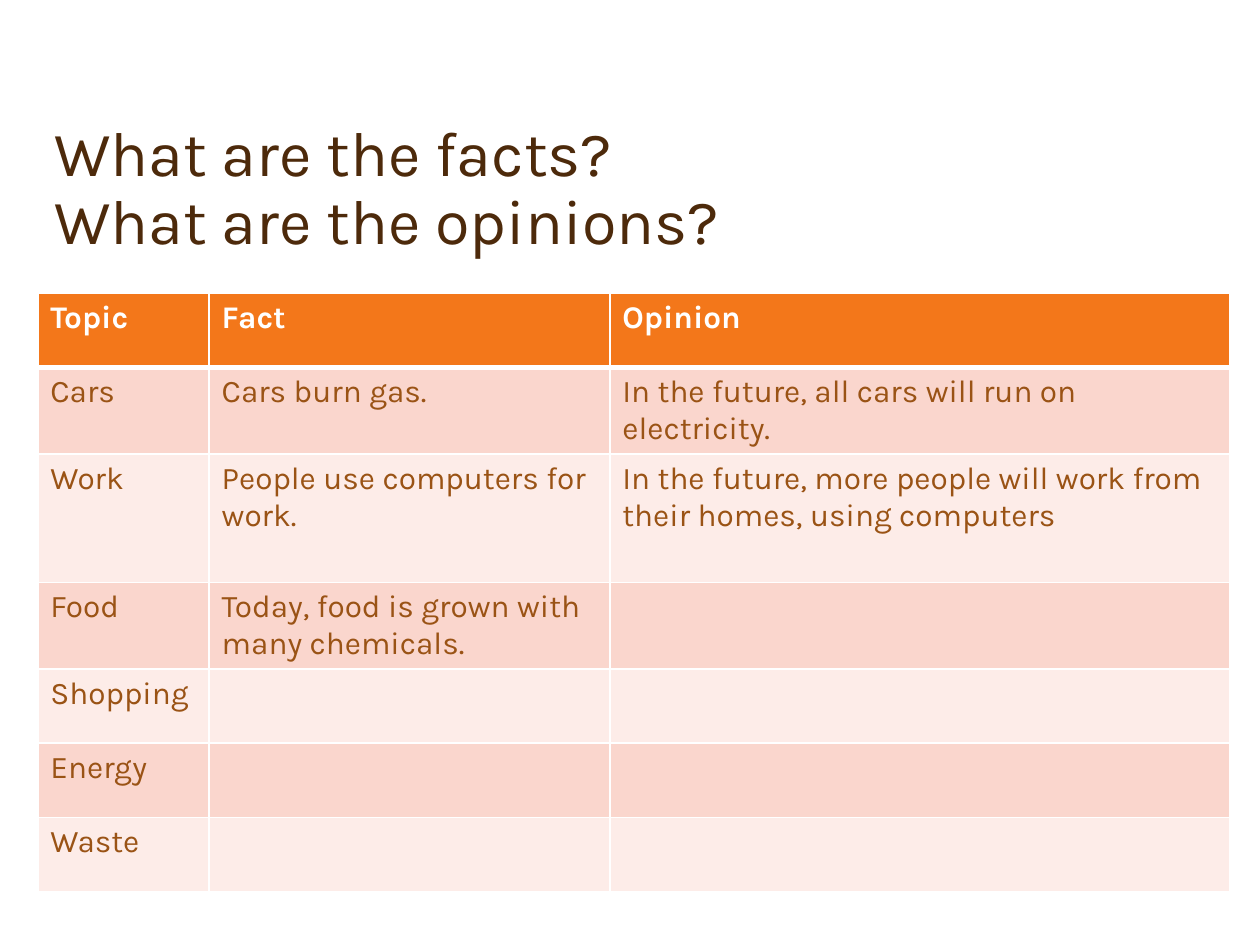
from lxml.etree import SubElement
from pptx import Presentation
from pptx.dml.color import RGBColor
from pptx.enum.text import MSO_ANCHOR, MSO_AUTO_SIZE, PP_ALIGN
from pptx.oxml.ns import qn
from pptx.util import Inches, Pt

WHITE = RGBColor(0xFF, 0xFF, 0xFF)
TITLE_BROWN = RGBColor(0x4D, 0x2A, 0x0B)
BODY_BROWN = RGBColor(0x9A, 0x53, 0x15)
ORANGE = RGBColor(0xF3, 0x77, 0x1A)
BANDS = (RGBColor(0xFD, 0xEC, 0xE8), RGBColor(0xFA, 0xD6, 0xCD))

TITLE = "What are the facts?\vWhat are the opinions?"
COLUMN_WIDTHS = (1.36, 3.18, 4.92)
ROW_HEIGHT = 0.59
TALL_ROWS = {"Work": 1.02}
ROWS = (
    ("Topic", "Fact", "Opinion"),
    ("Cars", "Cars burn gas.", "In the future, all cars will run on electricity."),
    ("Work", "People use computers for work.",
     "In the future, more people will work from their homes, using computers"),
    ("Food", "Today, food is grown with many chemicals.", ""),
    ("Shopping", "", ""),
    ("Energy", "", ""),
    ("Waste", "", ""),
)


class SlideBuilder:
    font_name = "Karla"

    def __init__(self, presentation):
        self.width = presentation.slide_width
        self.height = presentation.slide_height
        self.slide = presentation.slides.add_slide(presentation.slide_layouts[5])

    def box(self, left, top, width, height):
        """Turn shares of the slide's size into lengths."""
        return (int(left * self.width), int(top * self.height),
                int(width * self.width), int(height * self.height))

    def style(self, paragraph, size, color, bold=False):
        for font in [run.font for run in paragraph.runs] or [paragraph.font]:
            font.name = self.font_name
            font.size = Pt(size)
            font.bold = bold
            font.color.rgb = color

    def title(self, text, *shares):
        shape = self.slide.shapes.title
        shape.left, shape.top, shape.width, shape.height = self.box(*shares)
        text_frame = shape.text_frame
        text_frame.text = text
        text_frame.word_wrap = True
        text_frame.auto_size = MSO_AUTO_SIZE.NONE
        text_frame.vertical_anchor = MSO_ANCHOR.BOTTOM
        paragraph = text_frame.paragraphs[0]
        paragraph.alignment = PP_ALIGN.LEFT
        paragraph.line_spacing = 0.9
        self.style(paragraph, 36, TITLE_BROWN)

    def borders(self, cell, bottom):
        properties = cell._tc.get_or_add_tcPr()
        widths = {"a:lnL": 1, "a:lnR": 1, "a:lnT": 1, "a:lnB": bottom}
        for index, (tag, points) in enumerate(widths.items()):
            line = SubElement(properties, qn(tag), w=str(Pt(points)))
            fill = SubElement(line, qn("a:solidFill"))
            SubElement(fill, qn("a:srgbClr"), val=str(WHITE))
            properties.insert(index, line)

    def table(self, rows, column_widths, *shares):
        frame = self.slide.shapes.add_table(
            len(rows), len(column_widths), *self.box(*shares))
        table = frame.table
        for column, width in zip(table.columns, column_widths):
            column.width = Inches(width)
        for row_index, texts in enumerate(rows):
            is_header = row_index == 0
            row = table.rows[row_index]
            row.height = Inches(TALL_ROWS.get(texts[0], ROW_HEIGHT))
            for cell, text in zip(row.cells, texts):
                cell.text_frame.text = text
                self.style(cell.text_frame.paragraphs[0], 18,
                           WHITE if is_header else BODY_BROWN, is_header)
                cell.fill.solid()
                cell.fill.fore_color.rgb = ORANGE if is_header else BANDS[row_index % 2]
                # The header is set off by a thicker rule, shared with the row below
                self.borders(cell, bottom=3 if is_header else 1)
                if row_index == 1:
                    cell._tc.tcPr.find(qn("a:lnT")).set("w", str(Pt(3)))


def main():
    presentation = Presentation()
    presentation.slide_width = Inches(10)
    presentation.slide_height = Inches(7.5)
    builder = SlideBuilder(presentation)

    # Heading
    builder.title(TITLE, 0.033, 0.1, 0.825, 0.18)

    # Facts and opinions by topic
    builder.table(ROWS, COLUMN_WIDTHS, 0.03, 0.31, 0.95, 0.61)

    presentation.save("out.pptx")


if __name__ == "__main__":
    main()
